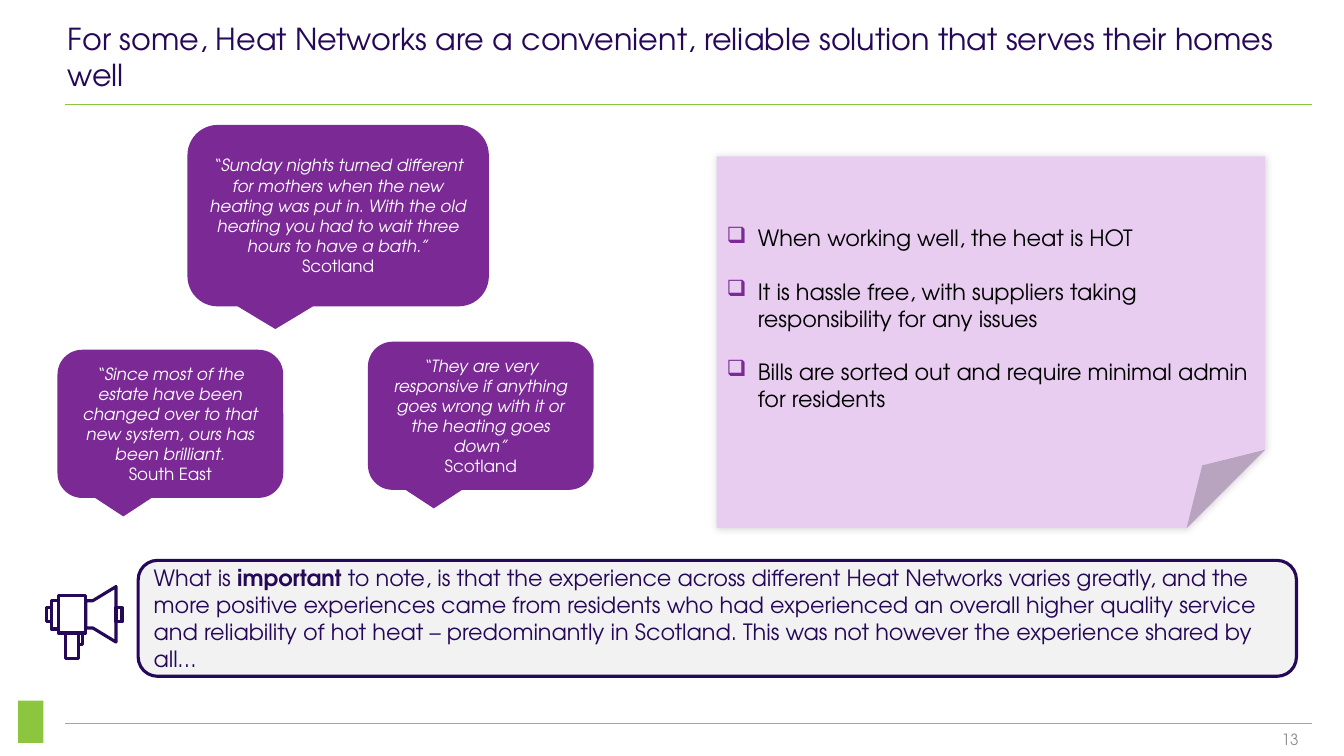
from dataclasses import dataclass
from typing import Optional

from lxml.etree import SubElement
from pptx import Presentation
from pptx.dml.color import RGBColor
from pptx.enum.shapes import MSO_CONNECTOR, MSO_SHAPE
from pptx.enum.text import MSO_ANCHOR, MSO_AUTO_SIZE, PP_ALIGN
from pptx.oxml.ns import qn
from pptx.shapes.autoshape import Shape
from pptx.slide import Slide
from pptx.text.text import _Paragraph
from pptx.util import Emu, Inches, Pt

SLIDE_WIDTH, SLIDE_HEIGHT = Inches(13.33), Inches(7.5)


@dataclass(frozen=True)
class Theme:
    font: str = "TeX Gyre Adventor"
    navy: RGBColor = RGBColor(0x26, 0x08, 0x59)
    purple: RGBColor = RGBColor(0x7A, 0x29, 0x95)
    lilac: RGBColor = RGBColor(0xE8, 0xCD, 0xF1)
    green: RGBColor = RGBColor(0x8C, 0xC6, 0x3F)
    pale: RGBColor = RGBColor(0xF2, 0xF2, 0xF2)
    white: RGBColor = RGBColor(0xFF, 0xFF, 0xFF)
    black: RGBColor = RGBColor(0, 0, 0)
    rule_grey: RGBColor = RGBColor(0xA6, 0xA6, 0xA6)
    number_grey: RGBColor = RGBColor(0x8C, 0x8C, 0x8C)
    title_size: float = 21.6
    body_size: float = 16
    quote_size: float = 12
    number_size: float = 11


THEME = Theme()


@dataclass(frozen=True)
class Area:
    """A box in percent of the slide's width and height."""
    left: float
    top: float
    width: float
    height: float

    def box(self) -> tuple[Emu, Emu, Emu, Emu]:
        return across(self.left), down(self.top), across(self.width), down(self.height)


@dataclass(frozen=True)
class Quote:
    area: Area
    words: str
    region: str


QUOTES = (
    Quote(Area(27.38, 45.2, 16.8, 19.6),
          "“They are very responsive if anything goes wrong with it or the heating goes down”",
          "Scotland"),
    Quote(Area(13.95, 16.53, 22.43, 24),
          "“Sunday nights turned different for mothers when the new heating was put in. "
          "With the old heating you had to wait three hours to have a bath.”", "Scotland"),
    Quote(Area(4.28, 46.27, 16.8, 19.6),
          "“Since most of the estate have been changed over to that new system, "
          "ours has been brilliant.", "South East"),
)
BENEFITS = (
    "When working well, the heat is HOT",
    "It is hassle free, with suppliers taking responsibility for any issues",
    "Bills are sorted out and require minimal admin for residents",
)
NOTE = (
    ("What is ", False),
    ("important", True),
    (" to note, is that the experience across different Heat Networks varies greatly, and "
     "the more positive experiences came from residents who had experienced an overall "
     "higher quality service and reliability of hot heat – predominantly in Scotland. "
     "This was not however the experience shared by all…", False),
)

# Megaphone outline on a grid of 77 columns by 74 rows.
MEGAPHONE_AREA = Area(3.38, 77.33, 5.78, 9.87)
MEGAPHONE_COLUMNS, MEGAPHONE_ROWS = 77, 74
MEGAPHONE_BOXES = ((1, 23, 5, 14), (6, 16, 7, 28), (13, 11, 27, 37),
                   (70, 23, 6, 14), (20, 48, 13, 25), (33, 48, 4, 11))
MEGAPHONE_HORN = ((40, 16), (47, 16), (70, 2), (70, 57), (47, 43), (40, 43))


def across(percent: float) -> Emu:
    return Emu(round(SLIDE_WIDTH * percent / 100))


def down(percent: float) -> Emu:
    return Emu(round(SLIDE_HEIGHT * percent / 100))


def format_paragraph(paragraph: _Paragraph, size: float, color: RGBColor,
                     alignment: PP_ALIGN = PP_ALIGN.LEFT, italic: bool = False) -> None:
    paragraph.alignment = alignment
    for run in paragraph.runs:
        run.font.name, run.font.size, run.font.italic = THEME.font, Pt(size), italic
        run.font.color.rgb = color


def add_panel(slide: Slide, kind: MSO_SHAPE, area: Area, fill: RGBColor,
              line: Optional[RGBColor] = None) -> Shape:
    shape = slide.shapes.add_shape(kind, *area.box())
    shape.shadow.inherit = False
    shape.fill.solid()
    shape.fill.fore_color.rgb = fill
    if line is None:
        shape.line.fill.background()
    else:
        shape.line.color.rgb, shape.line.width = line, Pt(2.25)
    shape.text_frame.word_wrap = True
    shape.text_frame.vertical_anchor = MSO_ANCHOR.MIDDLE
    return shape


def add_rule(slide: Slide, top: float, color: RGBColor) -> None:
    rule = slide.shapes.add_connector(
        MSO_CONNECTOR.STRAIGHT, across(4.8), down(top), across(97.6), down(top))
    rule.line.color.rgb, rule.line.width = color, Pt(0.5)
    SubElement(rule._element.spPr, qn("a:effectLst"))


def set_title(slide: Slide) -> None:
    title = slide.shapes.title
    title.left, title.top, title.width, title.height = Area(4.28, 2, 95.18, 10.93).box()
    frame = title.text_frame
    frame.text = ("For some, Heat Networks are a convenient, reliable solution "
                  "that serves their homes well")
    frame.auto_size, frame.vertical_anchor = MSO_AUTO_SIZE.NONE, MSO_ANCHOR.BOTTOM
    format_paragraph(frame.paragraphs[0], THEME.title_size, THEME.navy)


def add_slide_number(slide: Slide) -> None:
    frame = slide.shapes.add_textbox(*Area(89.33, 95.87, 8.03, 3.6).box()).text_frame
    frame.word_wrap = True
    frame.text = "13"
    format_paragraph(frame.paragraphs[0], THEME.number_size, THEME.number_grey, PP_ALIGN.RIGHT)


def add_quote(slide: Slide, quote: Quote) -> None:
    callout = add_panel(slide, MSO_SHAPE.ROUNDED_RECTANGULAR_CALLOUT, quote.area, THEME.purple)
    callout.text_frame.text = f"{quote.words}\n{quote.region}"
    for paragraph, italic in zip(callout.text_frame.paragraphs, (True, False)):
        format_paragraph(paragraph, THEME.quote_size, THEME.white, PP_ALIGN.CENTER, italic)


def add_note(slide: Slide) -> None:
    note = add_panel(slide, MSO_SHAPE.ROUNDED_RECTANGLE, Area(10.28, 74.13, 86.18, 15.33),
                     THEME.pale, THEME.navy)
    paragraph = note.text_frame.paragraphs[0]
    for words, bold in NOTE:
        run = paragraph.add_run()
        run.text, run.font.bold = words, bold
    format_paragraph(paragraph, THEME.body_size, THEME.navy)


def add_megaphone(slide: Slide) -> None:
    left, top, width, height = MEGAPHONE_AREA.box()
    boxes = [((x, y), (x + w, y), (x + w, y + h), (x, y + h)) for x, y, w, h in MEGAPHONE_BOXES]
    builder = slide.shapes.build_freeform(left, top)
    for outline in (MEGAPHONE_HORN, *boxes):
        points = [(left + width * x / MEGAPHONE_COLUMNS, top + height * y / MEGAPHONE_ROWS)
                  for x, y in outline]
        builder.move_to(*points[0])
        builder.add_line_segments(points[1:])
    megaphone = builder.convert_to_shape()
    megaphone.shadow.inherit = False
    megaphone.fill.background()
    megaphone.line.color.rgb, megaphone.line.width = THEME.navy, Pt(2.25)


def add_bullet(paragraph: _Paragraph) -> None:
    properties = paragraph._p.get_or_add_pPr()
    properties.set("marL", str(Inches(0.31)))
    properties.set("indent", str(-Inches(0.31)))
    color = SubElement(properties, qn("a:buClr"))
    SubElement(color, qn("a:srgbClr"), val=str(THEME.purple))
    SubElement(properties, qn("a:buChar"), char="❑")


def add_benefits(slide: Slide) -> None:
    card = add_panel(slide, MSO_SHAPE.FOLDED_CORNER, Area(53.33, 20.67, 40.8, 49.2), THEME.lilac)
    properties = card._element.spPr
    fold = properties.find(qn("a:prstGeom")).get_or_add_avLst()
    SubElement(fold, qn("a:gd"), name="adj", fmla="val 21100")
    shadow = SubElement(properties.find(qn("a:effectLst")), qn("a:outerShdw"),
                        blurRad=str(Pt(5)), dist="0", dir="0")
    color = SubElement(shadow, qn("a:srgbClr"), val=str(THEME.black))
    SubElement(color, qn("a:alpha"), val="14000")
    card.text_frame.margin_top = Inches(0.35)
    card.text_frame.text = "\n".join(BENEFITS)
    for position, paragraph in enumerate(card.text_frame.paragraphs):
        if position:
            paragraph.space_before = Pt(19)
        add_bullet(paragraph)
        format_paragraph(paragraph, THEME.body_size, THEME.black)


def main() -> None:
    presentation = Presentation()
    presentation.slide_width, presentation.slide_height = SLIDE_WIDTH, SLIDE_HEIGHT
    slide = presentation.slides.add_slide(presentation.slide_layouts[5])
    add_rule(slide, 13.8, THEME.green)
    add_rule(slide, 95.73, THEME.rule_grey)
    add_panel(slide, MSO_SHAPE.RECTANGLE, Area(1.35, 92.67, 1.88, 5.6), THEME.green)
    add_slide_number(slide)
    set_title(slide)
    for quote in QUOTES:
        add_quote(slide, quote)
    add_note(slide)
    add_megaphone(slide)
    add_benefits(slide)
    presentation.save("out.pptx")


if __name__ == "__main__":
    main()
